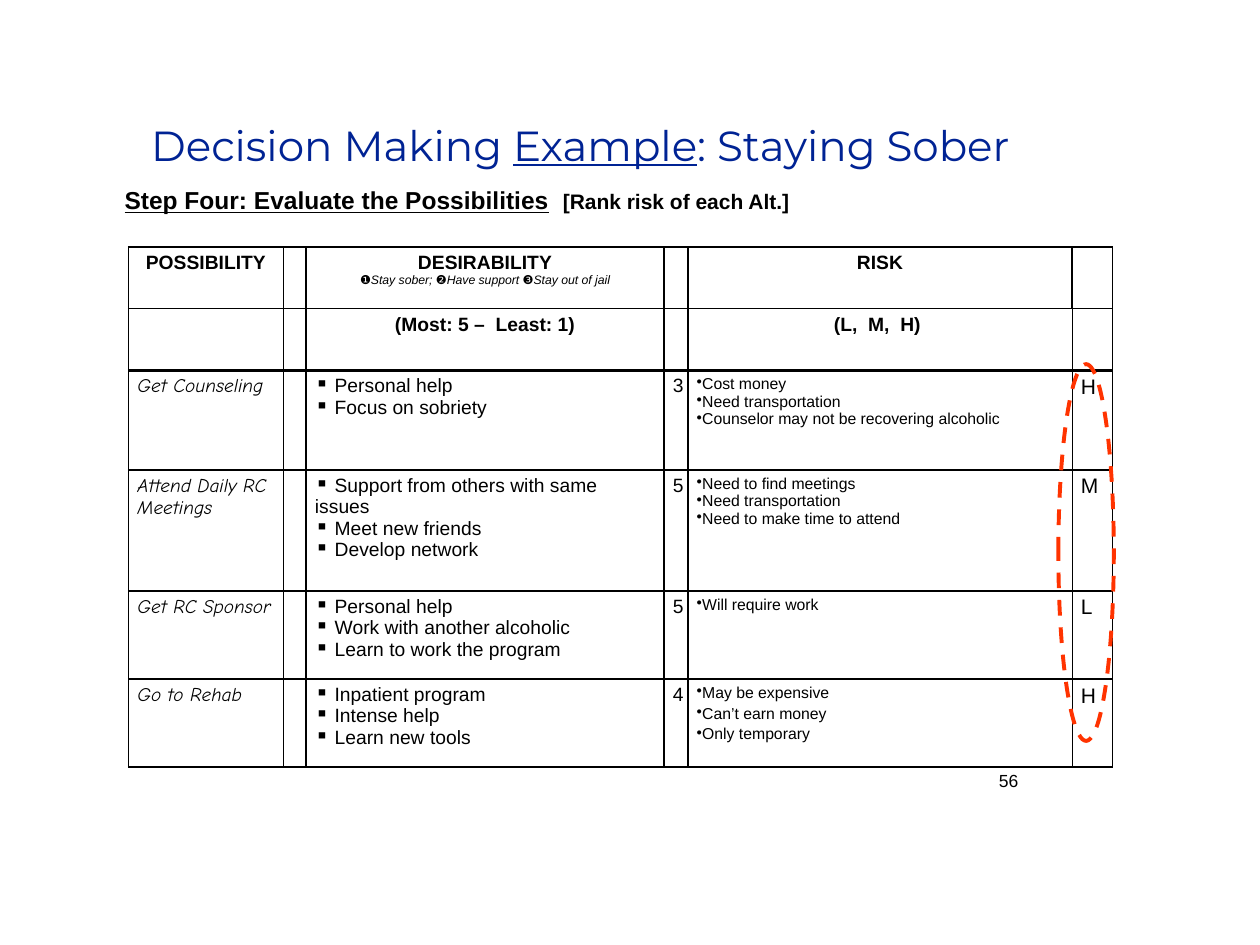
import pptx
import pptx.util
import pptx.dml.color
import pptx.enum.dml
import pptx.enum.shapes
import pptx.enum.text
import pptx.oxml
import pptx.oxml.ns
from pptx.util import Inches

BLACK = pptx.dml.color.RGBColor(0x00, 0x00, 0x00)
NAVY = pptx.dml.color.RGBColor(0x00, 0x23, 0x94)
ORANGE_RED = pptx.dml.color.RGBColor(0xFF, 0x33, 0x00)
ALIGN = pptx.enum.text.PP_ALIGN
ANCHOR = pptx.enum.text.MSO_ANCHOR

COLUMN_WIDTHS = [1.23, 0.18, 2.84, 0.19, 3.05, 0.32]
ROW_HEIGHTS = [0.49, 0.49, 0.79, 0.96, 0.7, 0.7]
HEADER_ROWS = 2

HEADINGS = [
    ["POSSIBILITY", "", "DESIRABILITY", "", "RISK", ""],
    ["", "", "(Most: 5 –  Least: 1)", "", "(L,  M,  H) ", ""],
]
GOALS = "❶Stay sober; ❷Have support ❸Stay out of jail"
POSSIBILITIES = [
    ("Get Counseling", ["Personal help", "Focus on sobriety"], "3",
     ["Cost money", "Need transportation", "Counselor may not be recovering alcoholic"], "H", 0),
    ("Attend Daily RC Meetings",
     ["Support from others with same issues", "Meet new friends", "Develop network"], "5",
     ["Need to find meetings", "Need transportation", "Need to make time to attend"], "M", 0),
    ("Get RC Sponsor",
     ["Personal help", "Work with another alcoholic", "Learn to work the program"], "5",
     ["Will require work"], "L", 0),
    ("Go to Rehab", ["Inpatient program", "Intense help", "Learn new tools"], "4",
     ["May be expensive", "Can’t earn money", "Only temporary"], "H", 1.8),
]


class SlideBuilder:
    def __init__(self, page, font="Arial", color=BLACK):
        self.page = page
        self.font = font
        self.color = color

    def style(self, span, size, bold=False, italic=False, underline=False, font=None, color=None):
        span.font.size = pptx.util.Pt(size)
        span.font.bold = bold
        span.font.italic = italic
        span.font.underline = underline
        span.font.name = font or self.font
        span.font.color.rgb = color or self.color

    def text(self, left, top, width, height, spans, align=ALIGN.LEFT, anchor=ANCHOR.TOP):
        box = self.page.shapes.add_textbox(Inches(left), Inches(top), Inches(width), Inches(height))
        box.text_frame.word_wrap = True
        box.text_frame.vertical_anchor = anchor
        para = box.text_frame.paragraphs[0]
        para.alignment = align
        for words, look in spans:
            span = para.add_run()
            span.text = words
            self.style(span, **look)

    def bullet(self, para, symbol, tab=None):
        properties = para._p.get_or_add_pPr()
        properties.set("marL", "0")
        properties.set("indent", "0")
        namespace = pptx.oxml.ns.nsdecls("a")
        properties.append(pptx.oxml.parse_xml(f'<a:buChar {namespace} char="{symbol}"/>'))
        if tab:
            properties.append(pptx.oxml.parse_xml(
                f'<a:tabLst {namespace}><a:tab pos="{Inches(tab)}" algn="l"/></a:tabLst>'))

    def fill_cell(self, cell, lines, size, align=ALIGN.LEFT, symbol=None, tab=None, gap=0, **look):
        cell.text_frame.text = "\n".join(lines)
        for index, para in enumerate(cell.text_frame.paragraphs):
            para.alignment = align
            if symbol:
                self.bullet(para, symbol, tab)
            if index and gap:
                para.space_before = pptx.util.Pt(gap)
            for span in para.runs:
                self.style(span, size, **look)

    def borders(self, cell, widths):
        for side, width in zip("LRTB", widths):
            cell._tc.get_or_add_tcPr().append(pptx.oxml.parse_xml(
                f'<a:ln{side} {pptx.oxml.ns.nsdecls("a")} w="{pptx.util.Pt(width)}">'
                f'<a:solidFill><a:srgbClr val="{self.color}"/></a:solidFill></a:ln{side}>'))

    def grid(self, left, top, column_widths, row_heights):
        frame = self.page.shapes.add_table(
            len(row_heights), len(column_widths), Inches(left), Inches(top),
            Inches(sum(column_widths)), Inches(sum(row_heights)))
        table = frame.table
        table.first_row = table.horz_banding = False
        for column, width in zip(table.columns, column_widths):
            column.width = Inches(width)
        for row, height in zip(table.rows, row_heights):
            row.height = Inches(height)
        for r, row in enumerate(table.rows):
            for c, cell in enumerate(row.cells):
                inner = 0.75 if r else 1
                sides = (inner, 1) if c % 2 else (1, inner)
                above = 2 if r == HEADER_ROWS else 1
                below = 2 if r == HEADER_ROWS - 1 else 1
                self.borders(cell, (*sides, above, below))
                cell.fill.background()
                cell.margin_left = cell.margin_right = Inches(0.07)
                cell.margin_top = cell.margin_bottom = Inches(0.04)
        return table

    def dashed_ellipse(self, left, top, width, height, color, weight):
        ellipse = self.page.shapes.add_shape(
            pptx.enum.shapes.MSO_SHAPE.OVAL,
            Inches(left), Inches(top), Inches(width), Inches(height))
        ellipse.shadow.inherit = False
        ellipse.fill.background()
        ellipse.line.color.rgb = color
        ellipse.line.width = pptx.util.Pt(weight)
        ellipse.line.dash_style = pptx.enum.dml.MSO_LINE.DASH


def main():
    deck = pptx.Presentation()
    deck.slide_width = Inches(10)
    deck.slide_height = Inches(7.5)
    builder = SlideBuilder(deck.slides.add_slide(deck.slide_layouts[6]))

    title = {"size": 24, "font": "Montserrat", "color": NAVY}
    builder.text(0.17, 0.83, 8.96, 0.63,
                 [("Decision Making ", title), ("Example", {**title, "underline": True}),
                  (": Staying Sober ", title)], ALIGN.CENTER, ANCHOR.MIDDLE)
    builder.text(6.62, 6.06, 1.56, 0.38, [("56", {"size": 10})], ALIGN.RIGHT)

    table = builder.grid(1.02, 1.96, COLUMN_WIDTHS, ROW_HEIGHTS)
    for r, headings in enumerate(HEADINGS):
        for c, heading in enumerate(headings):
            builder.fill_cell(table.cell(r, c), [heading], 11, ALIGN.CENTER, bold=True)
    goals = table.cell(0, 2).text_frame.add_paragraph()
    goals.text = GOALS
    goals.alignment = ALIGN.CENTER
    builder.style(goals.runs[0], 7, italic=True)

    for r, (name, benefits, score, risks, level, gap) in enumerate(POSSIBILITIES, HEADER_ROWS):
        builder.fill_cell(table.cell(r, 0), [name], 11, italic=True, font="Comic Neue")
        builder.fill_cell(table.cell(r, 2), [f" {benefit}" for benefit in benefits], 11,
                          symbol="▪", tab=0.25)
        builder.fill_cell(table.cell(r, 3), [score], 11)
        builder.fill_cell(table.cell(r, 4), risks, 9, symbol="•", gap=gap)
        builder.fill_cell(table.cell(r, 5), [level], 12)

    builder.text(0.89, 1.42, 7.95, 0.34,
                 [("Step Four: Evaluate the Possibilities",
                   {"size": 14, "bold": True, "underline": True}),
                  ("  ", {"size": 14, "bold": True}),
                  ("[Rank risk of each Alt.]", {"size": 12, "bold": True})])
    builder.dashed_ellipse(8.4, 2.89, 0.44, 2.99, ORANGE_RED, 2.25)
    deck.save("out.pptx")


if __name__ == "__main__":
    main()
